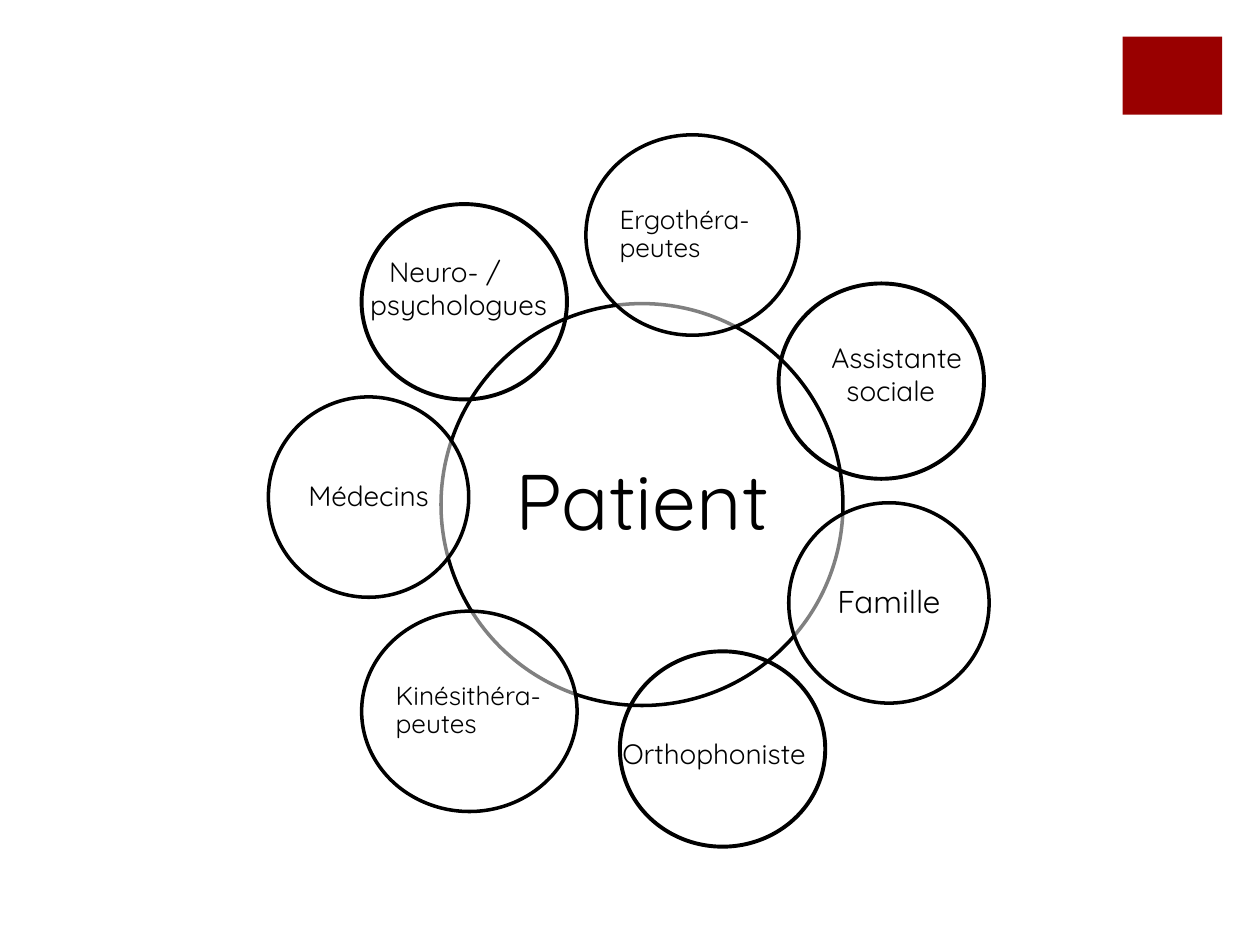
"""Build a slide showing the care team as circles around the patient."""
from dataclasses import dataclass

from pptx import Presentation
from pptx.dml.color import RGBColor
from pptx.enum.shapes import MSO_SHAPE as Preset
from pptx.enum.text import MSO_ANCHOR as Anchor, PP_ALIGN as Align
from pptx.oxml.ns import qn
from pptx.util import Inches, Pt
from lxml.etree import SubElement

COLOURS = {"ink": "000000", "paper": "FFFFFF", "accent": "990000"}
FONT = "Quicksand"
WIDTH, HEIGHT = Inches(10), Inches(7.5)


@dataclass
class Area:
    """A rectangle in percent of the slide's width and height."""
    left: float
    top: float
    width: float
    height: float

    def lengths(self) -> tuple:
        """Return the rectangle in slide units."""
        shares = zip((self.left, self.top, self.width, self.height),
                     (WIDTH, HEIGHT, WIDTH, HEIGHT))
        return tuple(int(share * full / 100) for share, full in shares)


@dataclass
class Role:
    """A circle that holds its own wording."""
    text: str
    area: Area
    size: int
    align: Align = Align.CENTER
    inset: float = 0.02


@dataclass
class Label:
    """A free text whose first and second lines have their own indents."""
    lines: list
    area: Area
    indents: list


ROLES = [
    Role("Patient", Area(35, 32.13, 31.9, 42.53), 45, inset=0.06),
    Role("Ergothéra-peutes", Area(46.5, 14.27, 16.9, 21.2), 15, Align.LEFT),
    Role("Famille", Area(62.6, 53.2, 15.9, 21.2), 18, inset=0.03),
    Role("Kinésithéra-peutes", Area(28.7, 64.67, 17.1, 21.2), 15, Align.LEFT),
    Role("Médecins", Area(21.3, 42, 15.9, 21.2), 16),
]
RINGS = [(28.7, 21.6), (61.8, 30), (49.2, 68.93)]
RING_SIZE = (16.3, 20.67)
LABELS = [
    Label(["Neuro- /", "psychologues"], Area(28.4, 26.27, 17.3, 8.53), [0.15, 0]),
    Label(["Assistante", "sociale"], Area(65, 35.33, 14, 8.53), [0, 0.12]),
    Label(["Orthophoniste"], Area(48.4, 77.33, 17.5, 4.93), [0]),
]


def colour(name: str) -> RGBColor:
    """Look up a colour by its name."""
    return RGBColor.from_string(COLOURS[name])


def style_text(para, size: int) -> None:
    """Format every run of a paragraph."""
    for span in para.runs:
        span.font.name = FONT
        span.font.size = Pt(size)
        span.font.color.rgb = colour("ink")


def draw_circle(page, area: Area, line_width: float):
    """Draw an outlined circle without a fill."""
    circle = page.shapes.add_shape(Preset.OVAL, *area.lengths())
    circle.shadow.inherit = False
    circle.fill.background()
    circle.line.color.rgb = colour("ink")
    circle.line.width = Pt(line_width)
    return circle


def draw_role(page, role: Role) -> None:
    """Draw a half transparent circle with its wording."""
    circle = draw_circle(page, role.area, 2)
    circle.fill.solid()
    circle.fill.fore_color.rgb = colour("paper")
    tint = circle.fill._xPr.find(qn("a:solidFill"))[0]
    SubElement(tint, qn("a:alpha"), val="50000")
    frame = circle.text_frame
    frame.text = role.text
    frame.word_wrap = True
    frame.vertical_anchor = Anchor.MIDDLE
    frame.margin_left = frame.margin_right = Inches(role.inset)
    frame.margin_top = frame.margin_bottom = Inches(role.inset)
    para = frame.paragraphs[0]
    para.alignment = role.align
    para.line_spacing = 0.9
    style_text(para, role.size)


def draw_label(page, label: Label) -> None:
    """Draw a free text with indented lines."""
    box = page.shapes.add_textbox(*label.area.lengths())
    frame = box.text_frame
    frame.word_wrap = True
    frame.text = "\n".join(label.lines)
    for para, indent in zip(frame.paragraphs, label.indents):
        para._p.get_or_add_pPr().set("marL", str(Inches(indent)))
        style_text(para, 16)


def draw_accent(page, area: Area) -> None:
    """Draw the coloured block in the corner."""
    block = page.shapes.add_shape(Preset.RECTANGLE, *area.lengths())
    block.shadow.inherit = False
    block.fill.solid()
    block.fill.fore_color.rgb = colour("accent")
    block.line.fill.background()


def main() -> None:
    """Build and save the deck."""
    deck = Presentation()
    deck.slide_width, deck.slide_height = WIDTH, HEIGHT
    page = deck.slides.add_slide(deck.slide_layouts[6])
    draw_accent(page, Area(89.1, 3.87, 7.9, 8.27))
    for role in ROLES:
        draw_role(page, role)
    for corner in RINGS:
        draw_circle(page, Area(*corner, *RING_SIZE), 2.25)
    for label in LABELS:
        draw_label(page, label)
    deck.save("out.pptx")


if __name__ == "__main__":
    main()
